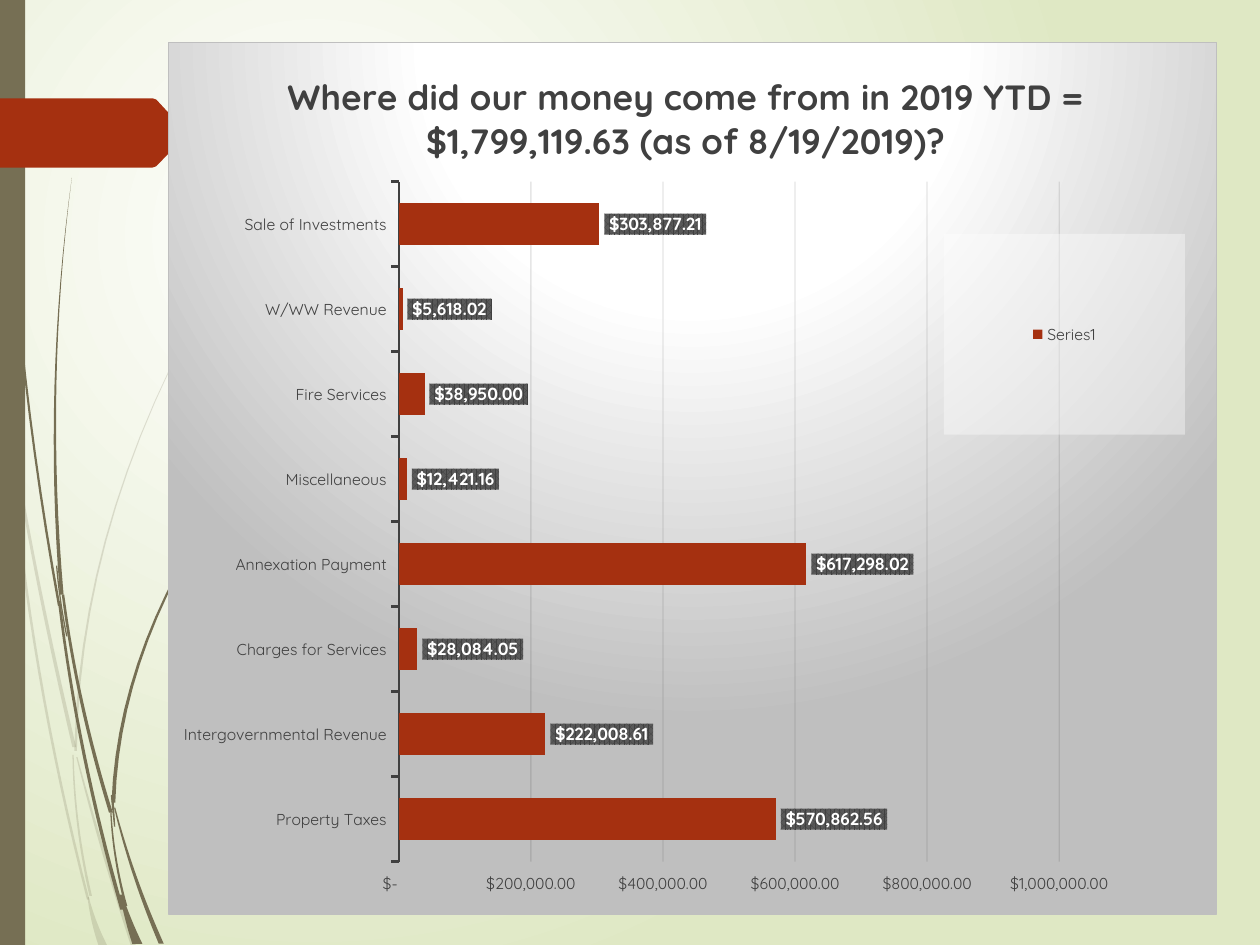
import lxml.etree
import pptx
import pptx.chart.data
import pptx.dml.color
import pptx.enum.chart
import pptx.enum.shapes
import pptx.oxml
import pptx.oxml.ns
import pptx.util

THEME = {
    "font": "Quicksand", "stem": "766F54", "accent": "A53010", "ink": "404040",
    "grid": "0D0D0D", "border": "BFBFBF", "label_dots": "595959", "white": "FFFFFF",
    "page": [(0, "FFFFFF"), (100, "DFE8C4")],
    "panel": [(0, "FFFFFF"), (39, "FFFFFF"), (100, "BFBFBF")],
    "title_pt": 20, "label_pt": 10, "axis_pt": 9,
}
RGB = pptx.dml.color.RGBColor.from_string
NS = pptx.oxml.ns.nsdecls("a", "c")
MONEY = '_("$"* #,##0.00_);_("$"* \\(#,##0.00\\);_("$"* "-"??_);_(@_)'

# Each blade of grass: start, middle and end in grid cells, then its width at both ends.
PALE_BLADES = [
    ((0, 290), (4, 319), (8, 350), 2, 1),
    ((10, 350), (32, 470), (59, 593), 2, 3),
    ((61, 601), (82, 676), (106, 751), 1, 4),
    ((8, 350), (31, 532), (70, 714), 2, 2),
    ((58, 599), (62, 655), (72, 711), 1, 2),
    ((70, 712), (75, 732), (82, 751), 1, 7),
    ((60, 596), (101, 374), (217, 153), 2, 0),
]
DARK_BLADES = [
    ((3, 0), (14, 240), (47, 481), 1, 2),
    ((50, 472), (65, 558), (88, 645), 2, 3),
    ((91, 641), (107, 695), (128, 749), 1, 4),
    ((47, 477), (67, 600), (97, 722), 2, 3),
    ((49, 472), (44, 306), (57, 141), 3, 0),
    ((96, 710), (102, 730), (109, 749), 2, 8),
    ((45, 449), (48, 476), (53, 505), 1, 1),
    ((90, 637), (124, 490), (216, 344), 3, 1),
    ((88, 645), (92, 682), (100, 719), 1, 2),
    ((89, 631), (90, 644), (91, 656), 2, 1),
]
TAG = [(149, 106), (124, 132), (121, 133), (0, 133), (0, 78), (121, 78), (124, 79)]
STEPS = 16

deck = pptx.Presentation()
deck.slide_width, deck.slide_height = pptx.util.Inches(10), pptx.util.Inches(7.5)
CELL = deck.slide_width // 1000  # the grid has 1000 columns and 750 rows
slide = deck.slides.add_slide(deck.slide_layouts[6])


def circle_gradient(stops, left, top, right, bottom):
    """Return gradient XML that spreads from the given rectangle, in percent."""
    marks = "".join(f'<a:gs pos="{at * 1000}"><a:srgbClr val="{colour}"/></a:gs>' for at, colour in stops)
    return (f'<a:gradFill {NS} rotWithShape="1"><a:gsLst>{marks}</a:gsLst><a:path path="circle">'
            f'<a:fillToRect l="{left * 1000}" t="{top * 1000}" r="{right * 1000}" b="{bottom * 1000}"/>'
            "</a:path></a:gradFill>")


def draw_outline(shapes, points, colour, alpha=100):
    corners = [(round(x * CELL), round(y * CELL)) for x, y in points]
    builder = shapes.build_freeform(*corners[0], scale=1.0)
    builder.add_line_segments(corners[1:], close=True)
    outline = builder.convert_to_shape()
    outline.shadow.inherit = False
    outline.fill.solid()
    outline.fill.fore_color.rgb = RGB(colour)
    outline.line.fill.background()
    if alpha < 100:
        tint = outline.element.xpath("p:spPr/a:solidFill/a:srgbClr")[0]
        lxml.etree.SubElement(tint, pptx.oxml.ns.qn("a:alpha"), val=str(alpha * 1000))


# Page and grass
slide.background.fill.solid()
page_fill = slide.element.xpath(".//p:bgPr/a:solidFill")[0]
page_fill.getparent().replace(page_fill, pptx.oxml.parse_xml(circle_gradient(THEME["page"], 50, 50, 100, 100)))
for blades, alpha in ((PALE_BLADES, 20), (DARK_BLADES, 100)):
    tuft = slide.shapes.add_group_shape()
    for start, middle, end, start_width, end_width in blades:
        left_edge, right_edge = [], []
        for step in range(STEPS + 1):
            t = step / STEPS
            x, y = ((1 - t) * (1 - 2 * t) * a + 4 * t * (1 - t) * b + t * (2 * t - 1) * c
                    for a, b, c in zip(start, middle, end))
            half = (start_width + (end_width - start_width) * t) / 2
            left_edge.append((x - half, y))
            right_edge.append((x + half, y))
        draw_outline(tuft.shapes, left_edge + right_edge[::-1], THEME["stem"], alpha)

# Side band and tag
band = slide.shapes.add_shape(pptx.enum.shapes.MSO_SHAPE.RECTANGLE, 0, 0, 20 * CELL, deck.slide_height)
band.shadow.inherit = False
band.fill.solid()
band.fill.fore_color.rgb = RGB(THEME["stem"])
band.line.fill.background()
draw_outline(slide.shapes, TAG, THEME["accent"])

# Revenue chart
revenue = pptx.chart.data.CategoryChartData(number_format=MONEY)
revenue.categories = ["Property Taxes", "Intergovernmental Revenue", "Charges for Services", "Annexation Payment",
                      "Miscellaneous", "Fire Services", "W/WW Revenue", "Sale of Investments"]
revenue.add_series("Series1", [570862.56, 222008.61, 28084.05, 617298.02, 12421.16, 38950, 5618.02, 303877.21])
chart = slide.shapes.add_chart(pptx.enum.chart.XL_CHART_TYPE.BAR_CLUSTERED, 133 * CELL, 33 * CELL,
                               833 * CELL, 693 * CELL, revenue).chart
chart.font.name, chart.font.size = THEME["font"], pptx.util.Pt(THEME["label_pt"])
plot = chart.plots[0]
plot.gap_width, plot.overlap, plot.vary_by_categories = 100, -100, False
bars = plot.series[0]
bars.format.fill.solid()
bars.format.fill.fore_color.rgb = RGB(THEME["accent"])

title = chart.chart_title.text_frame
for line, words in enumerate(["Where did our money come from in 2019 YTD =", "$1,799,119.63 (as of 8/19/2019)?"]):
    paragraph = title.add_paragraph() if line else title.paragraphs[0]
    run = paragraph.add_run()
    run.text = words
    run.font.name, run.font.size, run.font.bold = THEME["font"], pptx.util.Pt(THEME["title_pt"]), True
    run.font.color.rgb = RGB(THEME["ink"])

chart.has_legend = True
chart.legend.position = pptx.enum.chart.XL_LEGEND_POSITION.RIGHT
chart.legend.include_in_layout = False
sources, amounts = chart.category_axis, chart.value_axis
amounts.minimum_scale, amounts.maximum_scale, amounts.major_unit = 0, 1000000, 200000
amounts.tick_labels.number_format, amounts.tick_labels.number_format_is_linked = MONEY, False
amounts.format.line.fill.background()
sources.format.line.width = pptx.util.Pt(1.5)
sources.format.line.color.rgb = RGB(THEME["ink"])
grid = amounts.major_gridlines.format.line
grid.width = pptx.util.Pt(0.75)
grid.color.rgb = RGB(THEME["grid"])

labels = bars.data_labels
labels.show_value = True
labels.number_format, labels.number_format_is_linked = MONEY, False
labels.position = pptx.enum.chart.XL_LABEL_POSITION.OUTSIDE_END
for font, size, colour, bold in ((labels.font, "label_pt", "white", True),
                                 *((part.font, "axis_pt", "ink", False)
                                   for part in (sources.tick_labels, amounts.tick_labels, chart.legend))):
    font.name, font.size, font.bold = THEME["font"], pptx.util.Pt(THEME[size]), bold
    font.color.rgb = RGB(THEME[colour])

# Fills and placement that need XML
space = chart.element
grid_tint = space.xpath(".//c:majorGridlines//a:srgbClr")[0]
lxml.etree.SubElement(grid_tint, pptx.oxml.ns.qn("a:alpha"), val="10000")
for anchor, fill in (
    ("c:chart", circle_gradient(THEME["panel"], 50, -80, 50, 180)
     + f'<a:ln w="9525"><a:solidFill><a:srgbClr val="{THEME["border"]}"/></a:solidFill></a:ln>'),
    (".//c:legend/c:overlay", f'<a:solidFill><a:srgbClr val="{THEME["white"]}"><a:alpha val="39000"/>'
                              "</a:srgbClr></a:solidFill>"),
    (".//c:dLbls/c:numFmt", f'<a:pattFill prst="pct75"><a:fgClr><a:srgbClr val="{THEME["ink"]}"/></a:fgClr>'
                            f'<a:bgClr><a:srgbClr val="{THEME["label_dots"]}"/></a:bgClr></a:pattFill>'),
):
    space.xpath(anchor)[0].addnext(pptx.oxml.parse_xml(f"<c:spPr {NS}>{fill}</c:spPr>"))
for part, place in (("title", {"x": 0.11, "y": 0.03}),
                    ("plotArea", {"x": 0.22, "y": 0.16, "w": 0.63, "h": 0.78}),
                    ("legend", {"x": 0.74, "y": 0.22, "w": 0.23, "h": 0.23})):
    owner = space.xpath(f"c:chart/c:{part}")[0]
    for old in owner.xpath("c:layout"):
        owner.remove(old)
    inner = '<c:layoutTarget val="inner"/>' if part == "plotArea" else ""
    modes = "".join(f'<c:{side}Mode val="edge"/>' for side in "xy")
    sizes = "".join(f'<c:{side} val="{share}"/>' for side, share in place.items())
    owner.insert(0 if inner else 1, pptx.oxml.parse_xml(
        f"<c:layout {NS}><c:manualLayout>{inner}{modes}{sizes}</c:manualLayout></c:layout>"))

deck.save("out.pptx")
